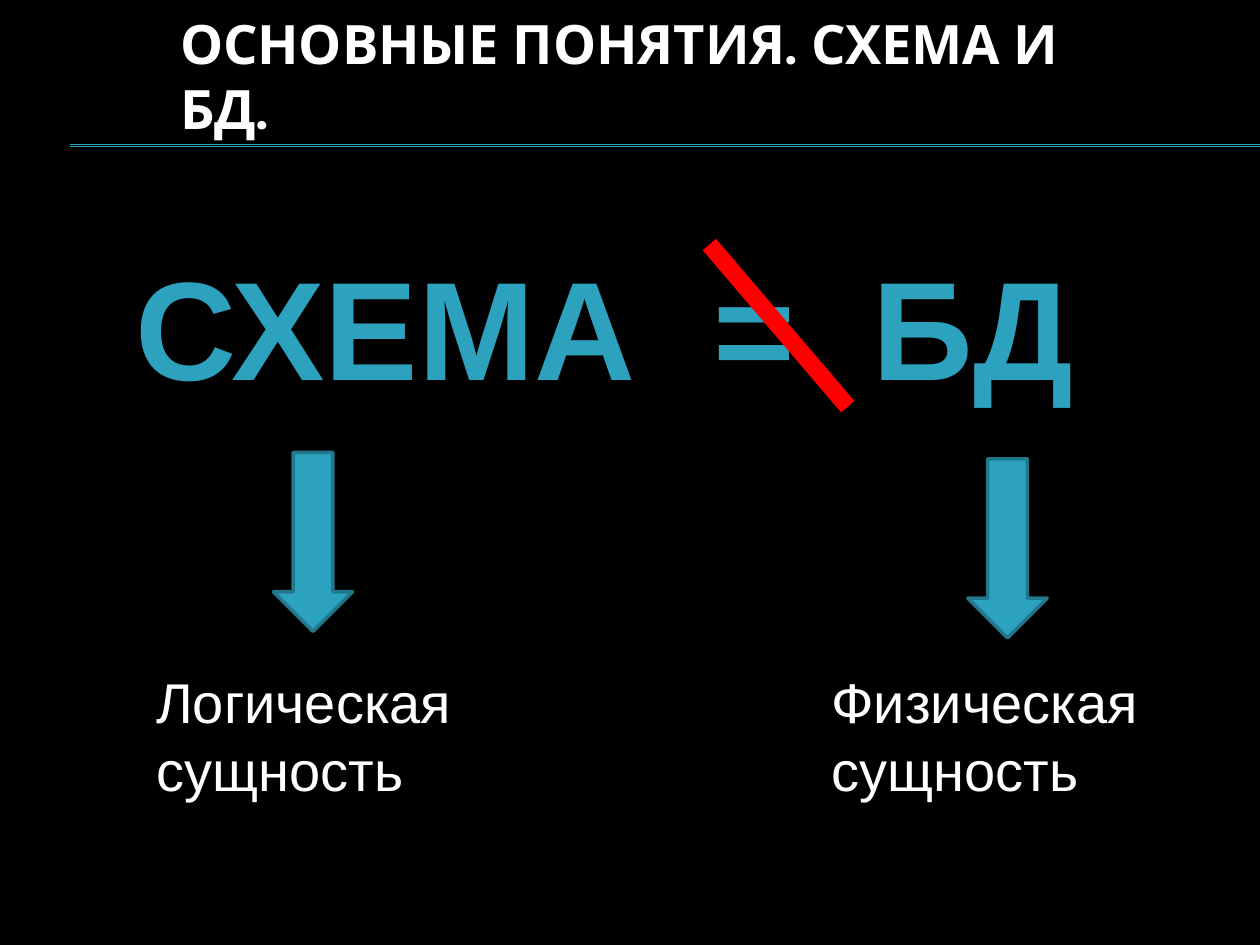
from dataclasses import dataclass

from lxml import etree
from pptx import Presentation
from pptx import util as u
from pptx.dml.color import RGBColor
from pptx.enum import shapes, text
from pptx.oxml.ns import qn


@dataclass(frozen=True)
class Theme:
    """Colours, fonts and type sizes of the slide."""
    back: str = "000000"
    light: str = "FFFFFF"
    accent: str = "2DA2BF"
    edge: str = "21788D"
    strike: str = "FF0000"
    heading_font: str = "Karla"
    body_font: str = "Arial"
    heading_size: int = 31
    equation_size: int = 80
    caption_size: int = 32


@dataclass(frozen=True)
class Box:
    """A region of the slide in centimetres."""
    left: float
    top: float
    width: float
    height: float

    def inner(self, left, top, width, height):
        """Return a box placed relative to this one."""
        return Box(self.left + left, self.top + top, width, height)

    def lengths(self):
        """Return left, top, width and height as lengths."""
        return [u.Cm(value) for value in (self.left, self.top, self.width, self.height)]


THEME = Theme()


def add_text(page, box, words, size, colour, font=THEME.body_font, bold=False,
             align=text.PP_ALIGN.LEFT, anchor=text.MSO_ANCHOR.TOP):
    """Add one wrapped paragraph of text in the box."""
    frame = page.shapes.add_textbox(*box.lengths()).text_frame
    frame.word_wrap = True
    frame.vertical_anchor = anchor
    para = frame.paragraphs[0]
    para.alignment = align
    span = para.add_run()
    span.text = words
    for name, value in {"name": font, "size": u.Pt(size), "bold": bold}.items():
        setattr(span.font, name, value)
    span.font.color.rgb = RGBColor.from_string(colour)


def add_line(page, box, colour, weight):
    """Draw a line from the top left to the bottom right of the box."""
    left, top, width, height = box.lengths()
    line = page.shapes.add_connector(
        shapes.MSO_CONNECTOR.STRAIGHT, left, top, left + width, top + height)
    line.line.color.rgb = RGBColor.from_string(colour)
    line.line.width = u.Pt(weight)
    etree.SubElement(line._element.spPr, qn("a:effectLst"))


def add_heading(page, box):
    """Place the heading with the double rule beneath it."""
    for top in (2.92, 2.95):
        add_line(page, box.inner(1.42, top, box.width - 1.42, 0), THEME.accent, 0.75)
    add_text(page, box.inner(3.38, 0.33, 19.61, 2.39), "ОСНОВНЫЕ ПОНЯТИЯ. СХЕМА И БД.",
             THEME.heading_size, THEME.light, THEME.heading_font, True,
             anchor=text.MSO_ANCHOR.MIDDLE)


def add_equation(page, box):
    """Place the equation and strike out its equals sign."""
    add_text(page, box, "СХЕМА  =  БД", THEME.equation_size, THEME.accent,
             bold=True, align=text.PP_ALIGN.CENTER)
    add_line(page, box.inner(12.4, 0.21, 2.79, 3.27), THEME.strike, 10)


def add_meaning(page, box, words, arrow_left, arrow_top):
    """Place a down arrow and the caption it points to."""
    arrow = page.shapes.add_shape(
        shapes.MSO_SHAPE.DOWN_ARROW, *box.inner(arrow_left, arrow_top, 1.6, 3.61).lengths())
    arrow.shadow.inherit = False
    arrow.fill.solid()
    arrow.fill.fore_color.rgb = RGBColor.from_string(THEME.accent)
    arrow.line.color.rgb = RGBColor.from_string(THEME.edge)
    arrow.line.width = u.Pt(2)
    add_text(page, box.inner(0, 4.22, box.width, 3), words, THEME.caption_size, THEME.light)


def main():
    """Build the slide and save the deck."""
    deck = Presentation()
    deck.slide_width, deck.slide_height = u.Cm(25.4), u.Cm(19.05)
    page = deck.slides.add_slide(deck.slide_layouts[6])
    page.background.fill.solid()
    page.background.fill.fore_color.rgb = RGBColor.from_string(THEME.back)
    add_heading(page, Box(0, 0, 25.4, 3))
    add_equation(page, Box(1.9, 4.72, 20.6, 3.68))
    add_meaning(page, Box(2.9, 9.12, 8, 7.22), "Логическая сущность", 2.61, 0)
    add_meaning(page, Box(16.51, 9.12, 8, 7.22), "Физическая сущность", 3, 0.13)
    deck.save("out.pptx")


if __name__ == "__main__":
    main()
